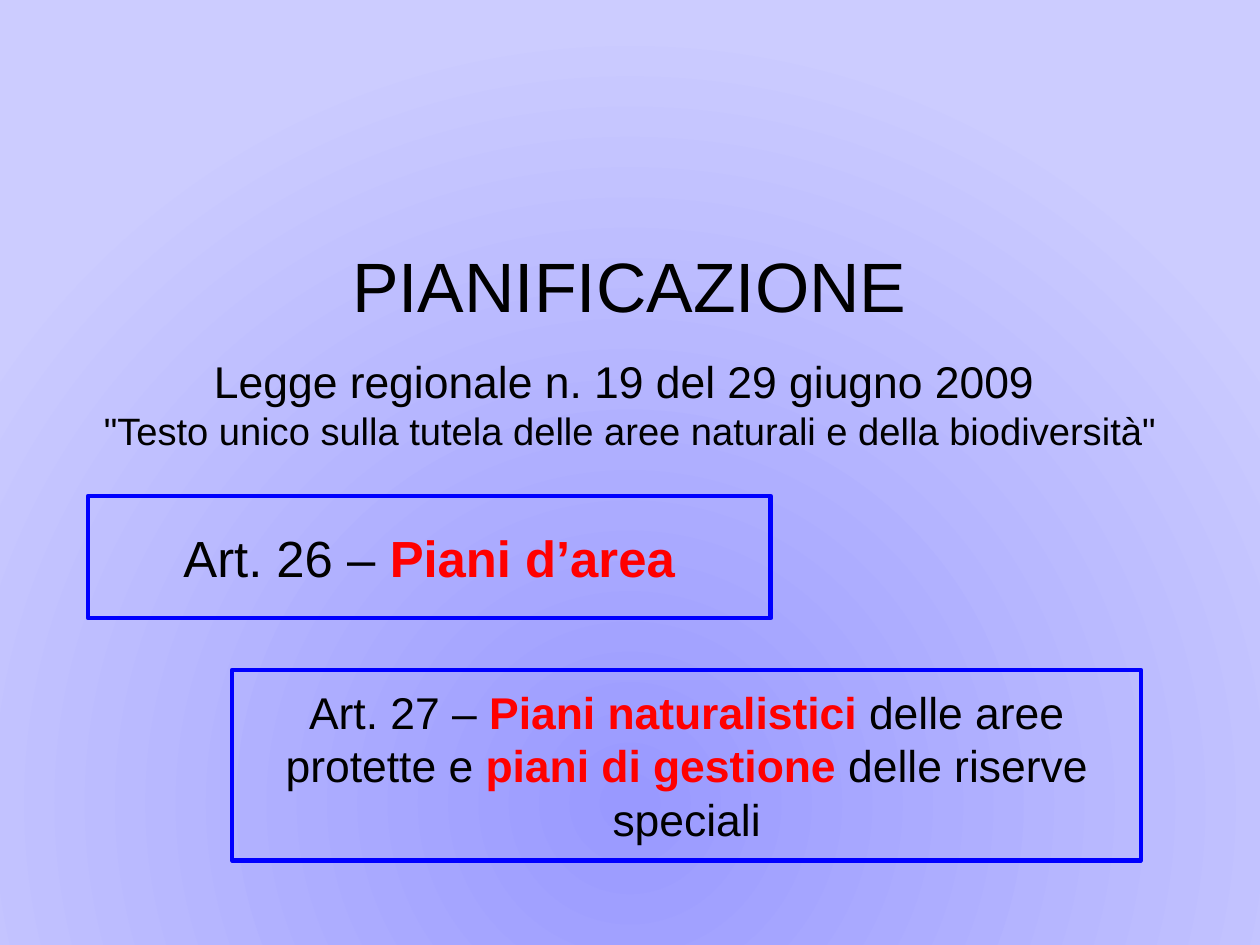
from dataclasses import dataclass

from lxml import etree
from pptx import Presentation
from pptx.dml.color import RGBColor
from pptx.enum import shapes, text
from pptx.oxml import ns
from pptx.util import Pt


@dataclass(frozen=True)
class Theme:
    font: str = "Arial"
    ink: str = "000000"
    accent: str = "FF0000"
    border: str = "0000FF"
    centre: str = "9999FF"
    edge: str = "CCCCFF"
    title: int = 44
    article: int = 32
    body: int = 28
    small: int = 24
    line: float = 2.83


T = Theme()
SLIDE = (793.7, 595.3)
LEFT, WIDTH, BAND = 55.5, 682.5, 102.2

# Paragraphs are (size, runs); a run is (words, highlighted).
TITLE = [(T.title, [("PIANIFICAZIONE", False)])]
LAW = [
    (T.body, [("Legge regionale n. 19 del 29 giugno 2009 ", False)]),
    (T.small, [('"Testo unico sulla tutela delle aree naturali e della biodiversità"', False)]),
]
ARTICLES = [
    ((LEFT, 312.5, 430, 77),
     [(T.article, [("Art. 26 – ", False), ("Piani d’area", True)])]),
    ((146.2, 422, 572.5, 120),
     [(T.body, [("Art. 27 – ", False), ("Piani naturalistici ", True),
                ("delle aree protette e ", False), ("piani di gestione ", True),
                ("delle riserve speciali", False)])]),
]


def rgb(value):
    return RGBColor.from_string(value)


def place(sp, box):
    sp.left, sp.top, sp.width, sp.height = map(Pt, box)


def write(sp, paragraphs, inset=0, bottom=None):
    tf = sp.text_frame
    tf.word_wrap = True
    tf.auto_size = text.MSO_AUTO_SIZE.NONE
    tf.vertical_anchor = text.MSO_ANCHOR.MIDDLE
    tf.margin_left = tf.margin_right = tf.margin_top = Pt(inset)
    tf.margin_bottom = Pt(inset if bottom is None else bottom)
    for i, (size, runs) in enumerate(paragraphs):
        p = tf.add_paragraph() if i else tf.paragraphs[0]
        p.alignment = text.PP_ALIGN.CENTER
        for words, highlighted in runs:
            r = p.add_run()
            r.text = words
            r.font.name, r.font.size, r.font.bold = T.font, Pt(size), highlighted
            r.font.color.rgb = rgb(T.accent if highlighted else T.ink)


def paint_background(s):
    """Fill the slide with a circular gradient centred low on the page."""
    fill = s.background.fill
    fill.gradient()
    for stop, colour, position in zip(fill.gradient_stops, (T.centre, T.edge), (0, 1)):
        stop.color.rgb, stop.position = rgb(colour), position
    grad = s.element.find(".//" + ns.qn("a:gradFill"))
    grad.remove(grad.find(ns.qn("a:lin")))
    circle = etree.SubElement(grad, ns.qn("a:path"), {"path": "circle"})
    etree.SubElement(circle, ns.qn("a:fillToRect"),
                     {"l": "50000", "t": "85000", "r": "50000", "b": "15000"})


def main():
    prs = Presentation()
    prs.slide_width, prs.slide_height = map(Pt, SLIDE)
    s = prs.slides.add_slide(prs.slide_layouts[5])
    paint_background(s)

    place(s.shapes.title, (LEFT, 142, WIDTH, BAND))
    write(s.shapes.title, TITLE, bottom=28)

    for box, paragraphs in ARTICLES:
        sp = s.shapes.add_shape(shapes.MSO_SHAPE.RECTANGLE, *map(Pt, box))
        sp.shadow.inherit = False
        sp.fill.background()
        sp.line.color.rgb, sp.line.width = rgb(T.border), Pt(T.line)
        write(sp, paragraphs, inset=1.4)

    law = s.shapes.add_textbox(*map(Pt, (LEFT, 203, WIDTH, BAND)))
    write(law, LAW)
    prs.save("out.pptx")


if __name__ == "__main__":
    main()
